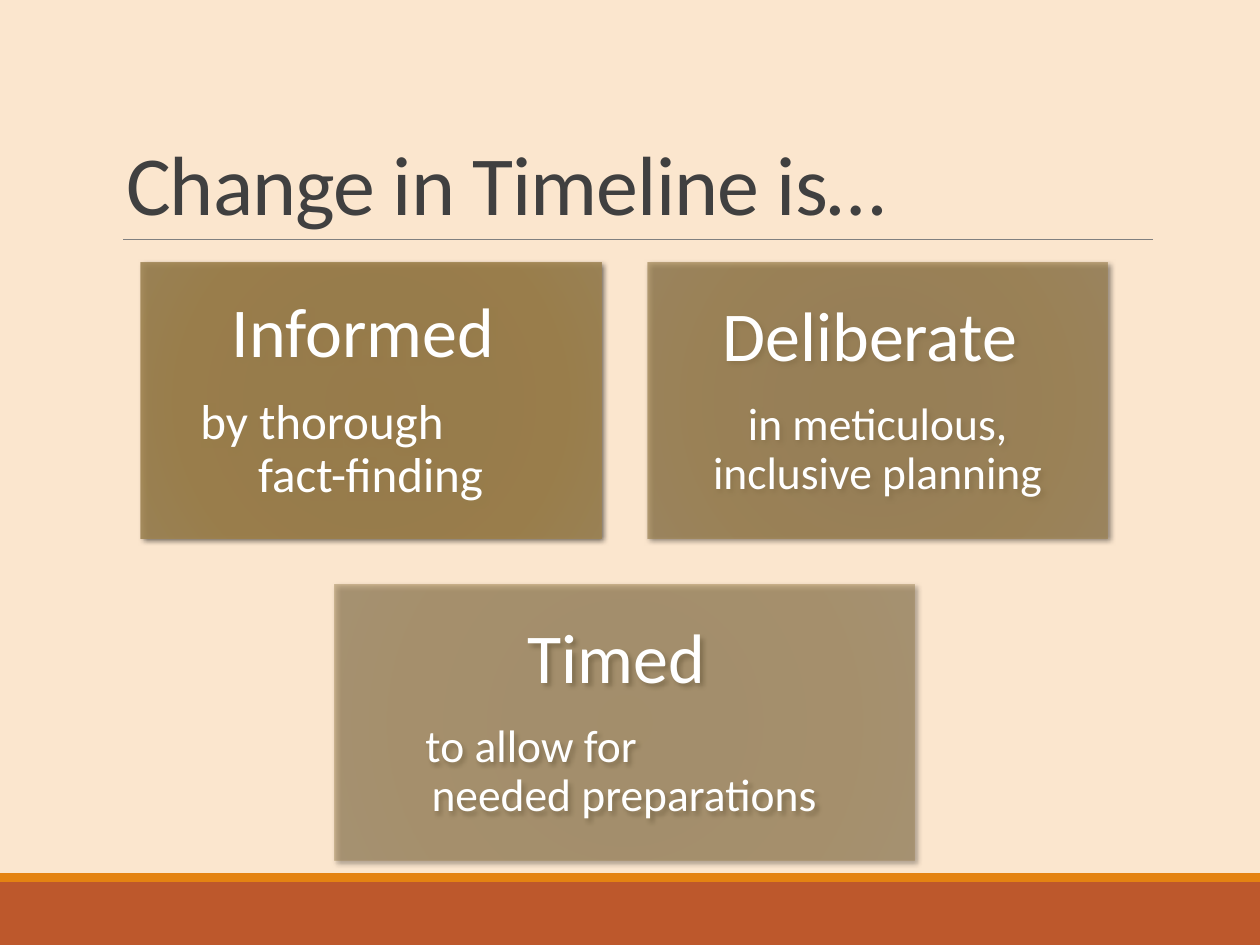
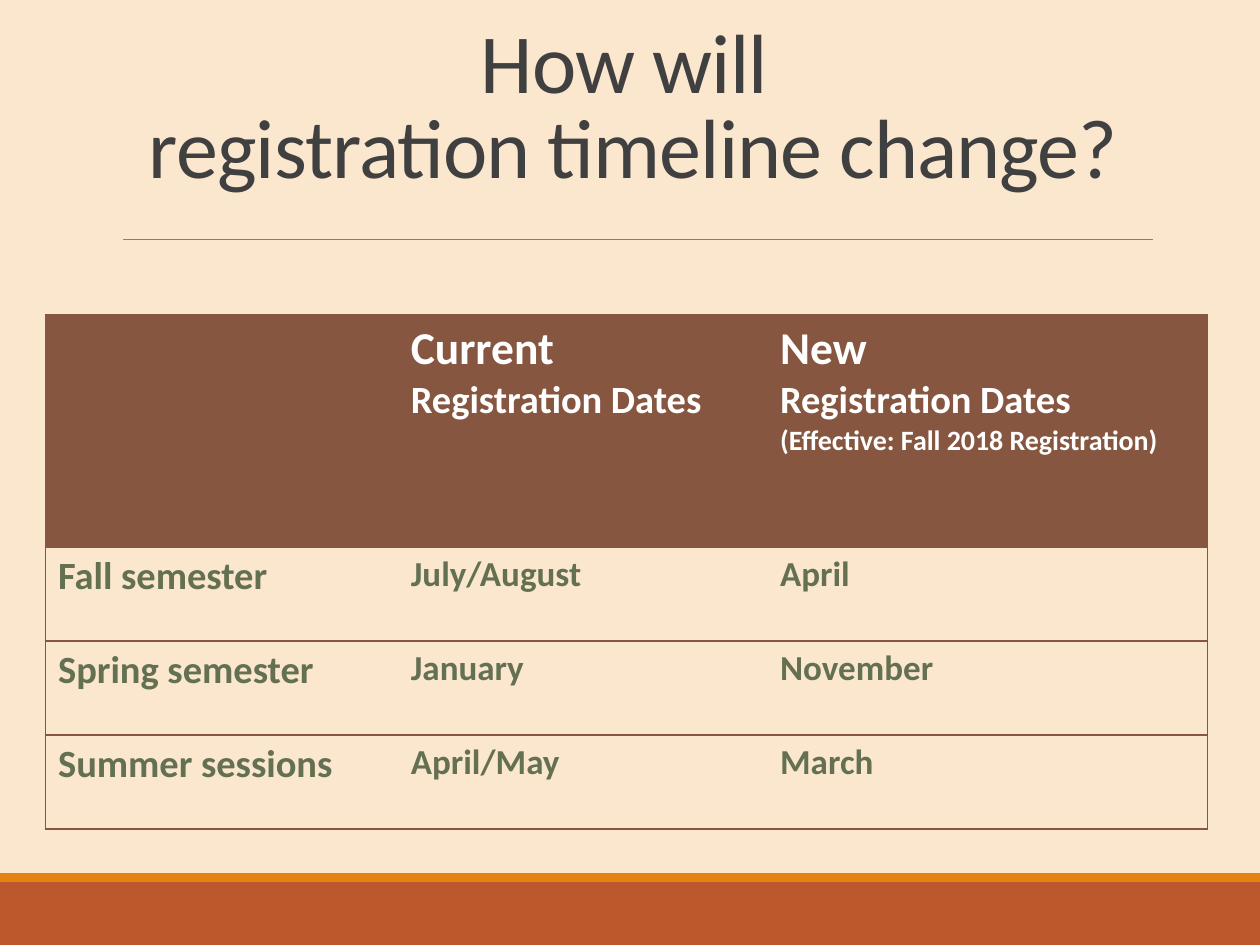
from lxml.etree import SubElement
from pptx import Presentation
from pptx.dml.color import RGBColor
from pptx.enum.shapes import MSO_CONNECTOR, MSO_SHAPE
from pptx.enum.text import MSO_ANCHOR, MSO_AUTO_SIZE, PP_ALIGN
from pptx.oxml import parse_xml
from pptx.oxml.ns import nsdecls, qn
from pptx.util import Pt

CREAM = RGBColor(0xFB, 0xE6, 0xCE)
RUST = RGBColor(0xBD, 0x58, 0x2C)
ORANGE = RGBColor(0xE4, 0x83, 0x12)
GRAY = RGBColor(0x80, 0x80, 0x80)
CHARCOAL = RGBColor(0x40, 0x40, 0x40)
BLACK = RGBColor(0x00, 0x00, 0x00)
WHITE = RGBColor(0xFF, 0xFF, 0xFF)
BROWN = RGBColor(0x86, 0x56, 0x40)
GREEN = RGBColor(0x63, 0x70, 0x52)
CARD_STOPS = [
    (0, RGBColor(0x9A, 0x7D, 0x48)),
    (34, RGBColor(0x9A, 0x7E, 0x4A)),
    (70, RGBColor(0x9E, 0x80, 0x49)),
    (100, RGBColor(0x9E, 0x84, 0x54)),
]

FONT = "Calibri"
WIDTH, HEIGHT = 720, 540
BAND_TOP, STRIPE_HEIGHT = 504, 5
RULE_LEFT, RULE_RIGHT, RULE_TOP = 70.5, 659, 136.8
PLAIN_TABLE_STYLE = "{2D5ABB26-0587-4C30-8999-92F81FD0307C}"


def set_all(target, values):
    for name, value in values.items():
        setattr(target, name, value)


class SlideBuilder:
    def __init__(self):
        self.deck = Presentation()
        set_all(self.deck, {"slide_width": Pt(WIDTH), "slide_height": Pt(HEIGHT)})
        self.slide = None

    def start_slide(self):
        layout = self.deck.slide_layouts.get_by_name("Title Only")
        self.slide = self.deck.slides.add_slide(layout)
        background = self.slide.background.fill
        background.solid()
        background.fore_color.rgb = CREAM
        self.band(BAND_TOP, HEIGHT - BAND_TOP, RUST)
        self.band(BAND_TOP - STRIPE_HEIGHT, STRIPE_HEIGHT, ORANGE)
        self.rule()

    def rectangle(self, left, top, width, height):
        box = self.slide.shapes.add_shape(
            MSO_SHAPE.RECTANGLE, Pt(left), Pt(top), Pt(width), Pt(height))
        box.shadow.inherit = False
        box.line.fill.background()
        return box

    def band(self, top, height, color):
        box = self.rectangle(0, top, WIDTH, height)
        box.fill.solid()
        box.fill.fore_color.rgb = color

    def rule(self):
        line = self.slide.shapes.add_connector(
            MSO_CONNECTOR.STRAIGHT, Pt(RULE_LEFT), Pt(RULE_TOP), Pt(RULE_RIGHT), Pt(RULE_TOP))
        line.line.color.rgb = GRAY
        line.line.width = Pt(0.5)
        SubElement(line._element.spPr, qn("a:effectLst"))

    def fill_para(self, para, lines, size, color, bold=False, **layout):
        """Fill a paragraph with lines parted by line breaks."""
        set_all(para, layout)
        spans = []
        for number, line in enumerate(lines):
            if number:
                para.add_line_break()
            span = para.add_run()
            span.text = line
            set_all(span.font, {"name": FONT, "size": Pt(size), "bold": bold})
            span.font.color.rgb = color
            spans.append(span)
        return spans

    def title(self, lines, left, top, width, height, align, anchor, inset):
        box = self.slide.shapes.title
        set_all(box, {"left": Pt(left), "top": Pt(top),
                      "width": Pt(width), "height": Pt(height)})
        frame = box.text_frame
        set_all(frame, {"auto_size": MSO_AUTO_SIZE.NONE, "word_wrap": True,
                        "vertical_anchor": anchor,
                        "margin_top": Pt(inset), "margin_bottom": Pt(inset)})
        spans = self.fill_para(frame.paragraphs[0], lines, 48, CHARCOAL,
                               alignment=align, line_spacing=0.85)
        for span in spans:
            span.font._element.set("spc", "-50")

    def card(self, place, opacity, heading, lines, size, margins=None):
        """Draw a shaded card; margins are the indents of the first and second line."""
        box = self.rectangle(*place)
        properties = box._element.spPr
        stops = "".join(
            f'<a:gs pos="{position * 1000}"><a:srgbClr val="{color}">'
            f'<a:alpha val="{opacity * 1000}"/></a:srgbClr></a:gs>'
            for position, color in CARD_STOPS)
        properties.find(qn("a:prstGeom")).addnext(parse_xml(
            f'<a:gradFill {nsdecls("a")} rotWithShape="1"><a:gsLst>{stops}</a:gsLst>'
            '<a:path path="circle"><a:fillToRect l="100000" t="100000" '
            'r="100000" b="100000"/></a:path></a:gradFill>'))
        properties.find(qn("a:effectLst")).append(parse_xml(
            f'<a:outerShdw {nsdecls("a")} blurRad="{Pt(3)}" dist="{Pt(2)}" '
            f'dir="2700000" rotWithShape="0"><a:srgbClr val="{BLACK}">'
            '<a:alpha val="60000"/></a:srgbClr></a:outerShdw>'))
        frame = box.text_frame
        set_all(frame, {"word_wrap": True, "vertical_anchor": MSO_ANCHOR.MIDDLE})
        set_all(frame, {f"margin_{side}": Pt(12) for side in ("left", "top", "right", "bottom")})
        self.fill_para(frame.paragraphs[0], [heading], 40, WHITE, line_spacing=0.9,
                       alignment=PP_ALIGN.CENTER, space_after=Pt(14))
        para = frame.add_paragraph()
        self.fill_para(para, lines, size, WHITE, line_spacing=0.9,
                       alignment=PP_ALIGN.LEFT if margins else PP_ALIGN.CENTER)
        if margins:
            first, second = margins
            para_format = para._p.get_or_add_pPr()
            para_format.set("marL", str(Pt(second)))
            para_format.set("indent", str(Pt(first - second)))

    def cell_borders(self, cell, sides):
        cell_format = cell._tc.get_or_add_tcPr()
        for position, side in enumerate(sides):
            cell_format.insert(position, parse_xml(
                f'<a:ln{side} {nsdecls("a")} w="{Pt(1)}"><a:solidFill>'
                f'<a:srgbClr val="{BROWN}"/></a:solidFill></a:ln{side}>'))

    def table(self, left, top, widths, heights, rows):
        """Draw a table whose cells are lists of (text, size) paragraphs."""
        table = self.slide.shapes.add_table(
            len(heights), len(widths), Pt(left), Pt(top),
            Pt(sum(widths)), Pt(sum(heights))).table
        set_all(table, {"first_row": False, "horz_banding": False})
        table._tbl.tblPr.find(qn("a:tableStyleId")).text = PLAIN_TABLE_STYLE
        for column, width in zip(table.columns, widths):
            column.width = Pt(width)
        last_column = len(widths) - 1
        for row_number, (row, height) in enumerate(zip(rows, heights)):
            table.rows[row_number].height = Pt(height)
            is_header = row_number == 0
            for column_number, texts in enumerate(row):
                cell = table.cell(row_number, column_number)
                if is_header:
                    cell.fill.solid()
                    cell.fill.fore_color.rgb = BROWN
                else:
                    cell.fill.background()
                sides = ["L"] * (column_number == 0) + ["R"] * (column_number == last_column)
                self.cell_borders(cell, sides + ["T", "B"])
                frame = cell.text_frame
                for number, (text, size) in enumerate(texts):
                    para = frame.add_paragraph() if number else frame.paragraphs[0]
                    self.fill_para(para, [text], size, WHITE if is_header else GREEN, bold=True)


def add_change_slide(builder):
    builder.start_slide()
    builder.title(["Change in Timeline is…"], 64.8, 22.3, 594, 114.5,
                  PP_ALIGN.LEFT, MSO_ANCHOR.BOTTOM, 3.6)
    left, top, width, height, gap = 80.6, 149.8, 263, 157.7, 26.5
    wide = 331.5
    wide_left = left + width + gap / 2 - wide / 2
    builder.card((left, top, width, height), 90, "Informed ",
                 ["by thorough", "fact-finding"], 28, margins=(22, 55))
    builder.card((left + width + gap, top, width, height), 70, "Deliberate ",
                 ["in meticulous, inclusive planning"], 26)
    builder.card((wide_left, top + height + gap, wide, height), 50, "Timed ",
                 ["to allow for", "needed preparations"], 26, margins=(40, 43.5))


def add_dates_slide(builder):
    builder.start_slide()
    builder.title(["How will ", "registration timeline change?"], 26, 13.7, 672, 98.6,
                  PP_ALIGN.CENTER, MSO_ANCHOR.MIDDLE, 0)
    header = [
        [],
        [("Current", 26), ("Registration Dates", 22)],
        [("New", 26), ("Registration Dates", 22),
         ("(Effective: Fall 2018 Registration)", 16)],
    ]
    dates = [
        ("Fall semester", "July/August", "April"),
        ("Spring semester", "January", "November"),
        ("Summer sessions", "April/May", "March"),
    ]
    body = [[[(term, 22)], [(current, 20)], [(new, 20)]] for term, current, new in dates]
    builder.table(26, 180, [201.6, 211, 251.3], [132.5] + [53.8] * len(dates), [header] + body)


def main():
    builder = SlideBuilder()
    add_change_slide(builder)
    add_dates_slide(builder)
    builder.deck.save("out.pptx")


if __name__ == "__main__":
    main()
